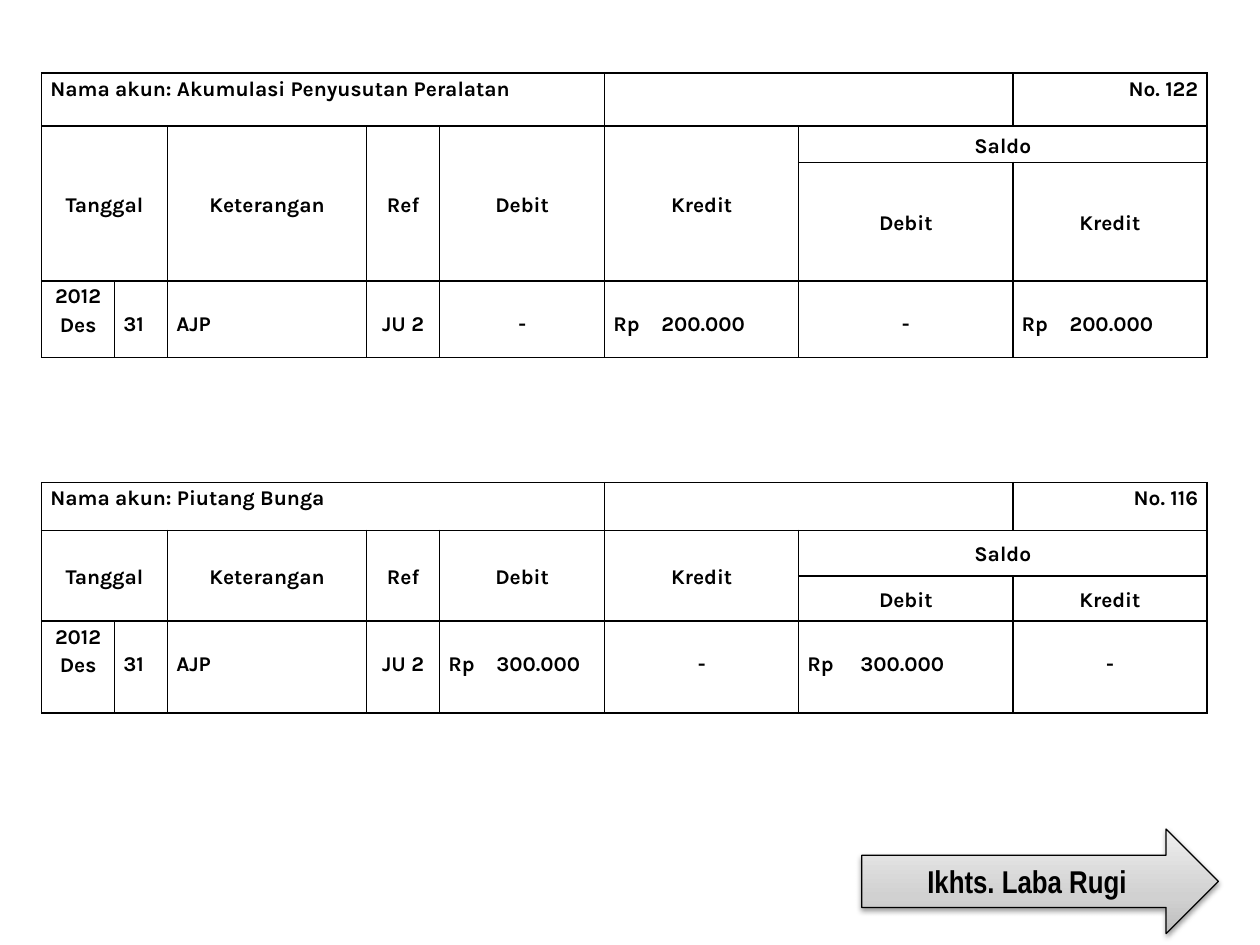
from lxml import etree
from pptx import Presentation
from pptx import util as u
from pptx.dml.color import RGBColor
from pptx.enum import shapes, text

NS = "http://schemas.openxmlformats.org/drawingml/2006/main"
LEFT, CENTER, RIGHT = text.PP_ALIGN.LEFT, text.PP_ALIGN.CENTER, text.PP_ALIGN.RIGHT


def add_xml(parent, markup):
    parent.append(etree.fromstring(f'<a:x xmlns:a="{NS}">{markup}</a:x>')[0])


def write(cell, lines, align, tab=None):
    """Fill a ledger cell with bold lines, aligning amounts on an optional tab."""
    frame = cell.text_frame
    frame.text = lines
    for para in frame.paragraphs:
        if tab:
            add_xml(para._p.get_or_add_pPr(),
                    f'<a:tabLst><a:tab pos="{u.Inches(tab)}" algn="l"/></a:tabLst>')
        para.alignment = align
        para.line_spacing = 1.15
        para.font.name = "Karla"
        para.font.size = u.Pt(12)
        para.font.bold = True
        para.font.color.rgb = RGBColor.from_string("000000")


deck = Presentation()
deck.slide_width, deck.slide_height = u.Inches(10), u.Inches(7.5)
page = deck.slides.add_slide(deck.slide_layouts[6])

COLUMNS = [0.58, 0.42, 1.58, 0.58, 1.31, 1.54, 1.7, 1.54]
ENTRY_ALIGN = [CENTER, LEFT, LEFT, CENTER]
LINE = 0.22  # height of one text line in an entry row
MERGES = [(0, 0, 0, 4), (0, 5, 0, 6), (1, 0, 2, 1), (1, 2, 2, 2),
          (1, 3, 2, 3), (1, 4, 2, 4), (1, 5, 2, 5), (1, 6, 1, 7)]
HEADINGS = [(1, 0, "Tanggal"), (1, 2, "Keterangan"), (1, 3, "Ref"), (1, 4, "Debit"),
            (1, 5, "Kredit"), (1, 6, "Saldo"), (2, 6, "Debit"), (2, 7, "Kredit")]

# account, number, top, row heights, amounts, tab stop of each amount
ledgers = [
    ("Akumulasi Penyusutan Peralatan", "122", 0.58, [0.42, 0.29, 0.94, 0.61],
     ["-", "Rp\t200.000", "-", "Rp\t200.000"], [None, 0.38, None, 0.38]),
    ("Piutang Bunga", "116", 3.83, [0.38, 0.36, 0.36, 0.73],
     ["Rp\t300.000", "-", "Rp\t300.000", "-"], [0.38, None, 0.42, None]),
]

for account, number, top, heights, amounts, tabs in ledgers:
    table = page.shapes.add_table(
        len(heights), len(COLUMNS), u.Inches(0.33), u.Inches(top),
        u.Inches(sum(COLUMNS)), u.Inches(sum(heights))).table
    table.first_row = table.horz_banding = False
    for column, width in zip(table.columns, COLUMNS):
        column.width = u.Inches(width)
    for row, height in zip(table.rows, heights):
        row.height = u.Inches(height)

    for cell in table.iter_cells():
        cell.margin_left = cell.margin_right = u.Inches(0.07)
        cell.margin_top = cell.margin_bottom = 0
        for side in "LRTB":
            add_xml(cell._tc.get_or_add_tcPr(),
                    f'<a:ln{side} w="12700"><a:solidFill><a:srgbClr val="000000"/>'
                    f'</a:solidFill></a:ln{side}>')
        cell.fill.background()
    for first_row, first_col, last_row, last_col in MERGES:
        table.cell(first_row, first_col).merge(table.cell(last_row, last_col))

    write(table.cell(0, 0), f"Nama akun: {account}", LEFT)
    write(table.cell(0, 7), f"No. {number}", RIGHT)
    for row, col, heading in HEADINGS:
        write(table.cell(row, col), heading, CENTER)
        table.cell(row, col).vertical_anchor = text.MSO_ANCHOR.MIDDLE

    for col, entry in enumerate(["2012\nDes", "31", "AJP", "JU 2"]):
        write(table.cell(3, col), entry, ENTRY_ALIGN[col])
    for col, (amount, tab) in enumerate(zip(amounts, tabs), start=4):
        write(table.cell(3, col), amount, LEFT if tab else CENTER, tab)
    for col in range(1, len(COLUMNS)):
        table.cell(3, col).margin_top = u.Inches(LINE)

arrow = page.shapes.add_shape(shapes.MSO_SHAPE.RIGHT_ARROW, u.Inches(6.84),
                              u.Inches(6.58), u.Inches(2.83), u.Inches(0.83))
stops = "".join(f'<a:gs pos="{share * 1000}"><a:srgbClr val="{shade}"/></a:gs>'
                for share, shade in [(0, "BDBDBD"), (35, "D1D1D1"), (100, "EEEEEE")])
add_xml(arrow._element.spPr,
        f'<a:gradFill rotWithShape="1"><a:gsLst>{stops}</a:gsLst>'
        '<a:lin ang="16200000" scaled="1"/></a:gradFill>')
arrow.line.color.rgb = RGBColor.from_string("000000")
arrow.line.width = u.Pt(0.75)
add_xml(arrow._element.spPr,
        f'<a:effectLst><a:outerShdw blurRad="{u.Pt(3.1)}" dist="{u.Pt(1.6)}" '
        'dir="5400000" rotWithShape="0"><a:srgbClr val="000000">'
        '<a:alpha val="38000"/></a:srgbClr></a:outerShdw></a:effectLst>')
arrow.text_frame.text = "Ikhts. Laba Rugi"
arrow.text_frame.vertical_anchor = text.MSO_ANCHOR.MIDDLE
label = arrow.text_frame.paragraphs[0]
label.alignment = CENTER
label.font.name = "Arial Narrow"
label.font.size = u.Pt(18)
label.font.bold = True
label.font.color.rgb = RGBColor.from_string("000000")

deck.save("out.pptx")
